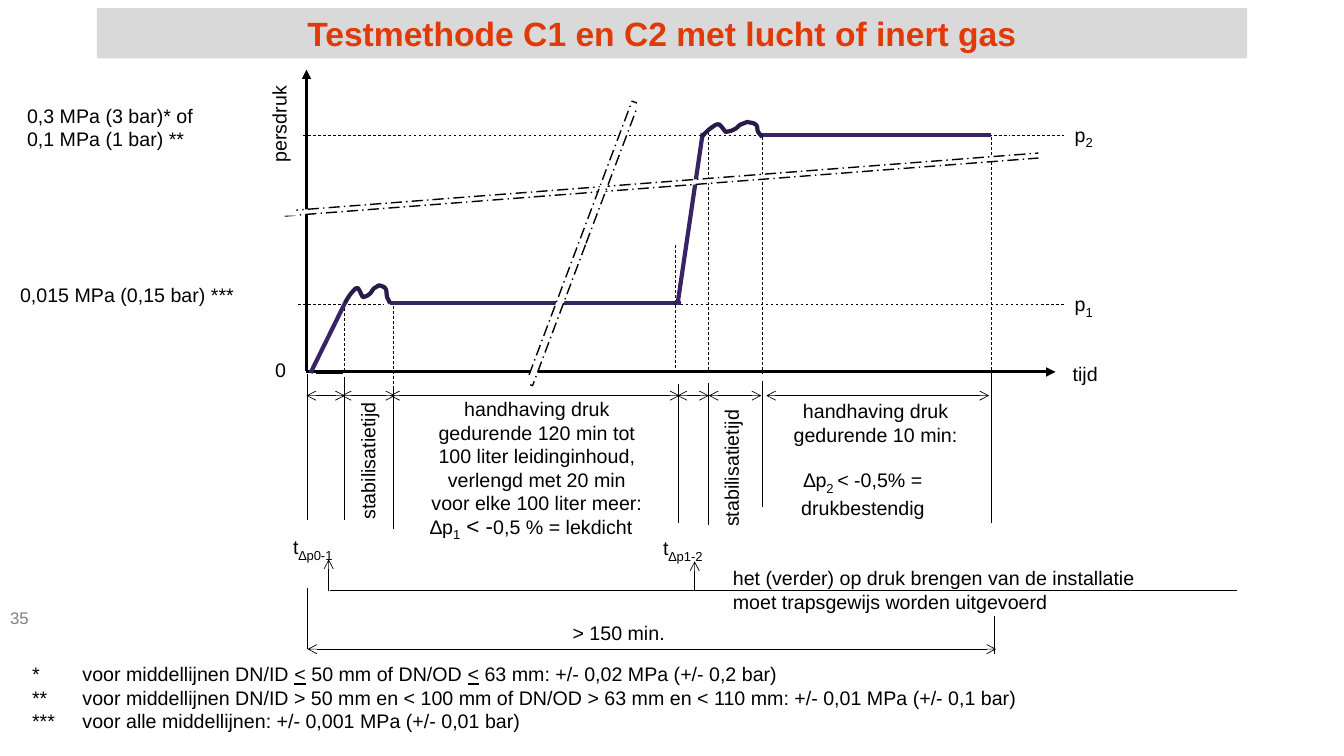
"""Draw the pressure test diagram for methods C1 and C2 on a grid of 0.1 inch."""
from dataclasses import dataclass
from typing import NamedTuple

import lxml.etree
import pptx
import pptx.dml.color
import pptx.enum.dml
import pptx.enum.shapes
import pptx.enum.text
import pptx.oxml.ns
import pptx.util

DASH = pptx.enum.dml.MSO_LINE.DASH
LONG_DASH_DOT = pptx.enum.dml.MSO_LINE.LONG_DASH_DOT
LEFT = pptx.enum.text.PP_ALIGN.LEFT
CENTER = pptx.enum.text.PP_ALIGN.CENTER
TOP = pptx.enum.text.MSO_ANCHOR.TOP
MIDDLE = pptx.enum.text.MSO_ANCHOR.MIDDLE
BLACK, WHITE, PRESSURE, WAVE = "000000", "FFFFFF", "372462", "291B49"

START, STABLE_1, HOLD_1, RISE, STABLE_2, HOLD_2, END = 30.5, 34.2, 39, 67.3, 70.3, 75.6, 98.3
LEVEL_1, LEVEL_2, TIME_AXIS, DIMENSIONS, TOTAL = 30.2, 13.4, 36.9, 39.25, 64.4
WAVE_POINTS = [
    (0, 18), (2, 14), (5, 9), (8, 6), (9, 5), (11, 2), (13, 3), (15, 5), (16, 9),
    (18, 12), (20, 11), (22, 11), (24, 9), (26, 8), (27, 5), (29, 3), (31, 2),
    (32, 1), (34, 0), (36, 1), (39, 1), (40, 3), (42, 5), (41, 9), (42, 12),
    (43, 14), (44, 16), (45, 18),
]


class Segment(NamedTuple):
    x1: float
    y1: float
    x2: float
    y2: float


@dataclass(frozen=True)
class Stroke:
    segments: list[Segment]
    width: float = 0.5
    color: str = BLACK
    dash: object = None
    head: str = ""
    tail: str = ""


class Bar(NamedTuple):
    left: float
    top: float
    width: float
    height: float
    rotation: float = 0
    outlined: bool = False


class Run(NamedTuple):
    text: str
    size: float = 14
    baseline: int = 0
    underline: bool = False


@dataclass(frozen=True)
class Label:
    left: float
    top: float
    width: float
    height: float
    lines: list[list[Run]]
    align: object = LEFT
    rotation: float = 0
    wrap: bool = False
    hanging: float = 0
    color: str = BLACK
    inset: float = 1
    anchor: object = TOP


STROKES = [
    Stroke([Segment(30.4, 36.8, 30.4, 6.9), Segment(30.4, TIME_AXIS, 104.7, TIME_AXIS)],
           width=2.25, tail="triangle"),
    Stroke([Segment(29.6, LEVEL_1, 38.1, LEVEL_1), Segment(67, LEVEL_1, 105.5, LEVEL_1),
            Segment(30.1, LEVEL_2, 100.1, LEVEL_2), Segment(100.4, LEVEL_2, 105.5, LEVEL_2),
            Segment(STABLE_1, 30.1, STABLE_1, 36.8), Segment(HOLD_1, 29.9, HOLD_1, 38.3),
            Segment(67, 24.3, 67, 36.7), Segment(STABLE_2, 13.1, STABLE_2, 36.7),
            Segment(HOLD_2, 13.6, HOLD_2, 37.1), Segment(END, 13.6, END, 37.2)], dash=DASH),
    Stroke([Segment(START, 37.1, START, 51.6), Segment(STABLE_1, 37.4, STABLE_1, 51.6),
            Segment(HOLD_1, 38.3, HOLD_1, 52.5), Segment(RISE, 38.1, RISE, 51.9),
            Segment(STABLE_2, 38, STABLE_2, 52.1), Segment(HOLD_2, 37.8, HOLD_2, 50.3),
            Segment(END, 37.1, END, 51.9), Segment(START, 58.3, START, TOTAL),
            Segment(98.6, 61.1, 98.6, 64.9), Segment(32.7, 58.6, 122.7, 58.6),
            Segment(31.3, 37, 34, 37)]),
    Stroke([Segment(32.6, 58.6, 32.6, 55.5), Segment(68.9, 58.6, 68.9, 55.7)], tail="arrow"),
    Stroke([Segment(30.4, DIMENSIONS, STABLE_1, DIMENSIONS),
            Segment(33.9, DIMENSIONS, 39.2, DIMENSIONS),
            Segment(38.7, DIMENSIONS, 67.4, DIMENSIONS),
            Segment(67.2, DIMENSIONS, STABLE_2, DIMENSIONS),
            Segment(STABLE_2, DIMENSIONS, 75.5, DIMENSIONS),
            Segment(76, DIMENSIONS, 98.1, DIMENSIONS),
            Segment(START, TOTAL, 98.8, TOTAL)], head="arrow", tail="arrow"),
    Stroke([Segment(30.8, 37, STABLE_1, 30.1), Segment(38.7, 30.1, 67.5, 30.1),
            Segment(67.2, LEVEL_1, 69.7, 13.2), Segment(75.6, LEVEL_2, END, LEVEL_2)],
           width=3, color=PRESSURE),
]
BARS = [
    Bar(28, 18, 76.8, 0.5, 355.6, True), Bar(103, 15, 3.3, 2.9), Bar(26.1, 18.5, 3.3, 2.9),
    Bar(42.8, 23.8, 29.9, 0.7, 290.6, True), Bar(63.2, 8.5, 3.8, 2.4), Bar(49.6, 37.4, 3, 1.1),
]
LABELS = [
    Label(1.7, 9.8, 19, 8.1, [[Run("0,3 MPa (3 bar)* of")], [Run("0,1 MPa (1 bar) **")]]),
    Label(1, 27.6, 23.9, 3.4, [[Run("0,015 MPa (0,15 bar) ***")]]),
    Label(22.6, 10.3, 10.2, 3.4, [[Run("persdruk")]], rotation=270),
    Label(26.3, 35, 3.1, 3.4, [[Run("0")]]),
    Label(105.4, 35.4, 5.1, 3.4, [[Run("tijd")]]),
    Label(105.6, 28.2, 3.9, 3.4, [[Run("p"), Run("1", 16, -25)]]),
    Label(105.6, 11.4, 3.9, 3.4, [[Run("p"), Run("2", 16, -25)]]),
    Label(28.1, 52.3, 6.4, 3.4, [[Run("t"), Run("∆p0-1", 16, -25)]]),
    Label(64.8, 52.4, 6.4, 3.4, [[Run("t"), Run("∆p1-2", 16, -25)]]),
    Label(55.8, 61.1, 11.2, 3.4, [[Run("> 150 min.")]]),
    Label(41.2, 38.9, 24.1, 12.8,
          [[Run("handhaving druk")], [Run("gedurende 120 min tot")],
           [Run("100 liter leidinginhoud,")], [Run("verlengd met 20 min")],
           [Run("voor elke 100 liter meer:")]], CENTER),
    Label(38.4, 50.3, 28.6, 3.7,
          [[Run("∆p"), Run("1", 16, -25), Run(" < -", 16), Run("0,5 % = lekdicht")]],
          CENTER, wrap=True),
    Label(77.7, 39.1, 18.3, 8.1, [[Run("handhaving druk")], [Run("gedurende 10 min:")]], CENTER),
    Label(72.3, 45.7, 26.6, 5.7,
          [[Run("∆p"), Run("2 ", 16, -25), Run("< -0,5% =")], [Run("drukbestendig")]],
          CENTER, wrap=True),
    Label(29.7, 44, 13.6, 3.4, [[Run("stabilisatietijd")]], rotation=270, wrap=True),
    Label(65.5, 44.5, 14.1, 3.4, [[Run("stabilisatietijd")]], rotation=270, wrap=True),
    Label(71.7, 55.7, 44.2, 5.7,
          [[Run("het (verder) op druk brengen van de installatie")],
           [Run("moet trapsgewijs worden uitgevoerd")]], wrap=True),
    Label(2.2, 65.2, 130.7, 8.1,
          [[Run("*\tvoor middellijnen DN/ID "), Run("<", underline=True),
            Run(" 50 mm of DN/OD "), Run("<", underline=True),
            Run(" 63 mm: +/- 0,02 MPa (+/- 0,2 bar)")],
           [Run("**\tvoor middellijnen DN/ID > 50 mm en < 100 mm of DN/OD > 63 mm en < 110 mm: "
                "+/- 0,01 MPa (+/- 0,1 bar)")],
           [Run("***\tvoor alle middellijnen: +/- 0,001 MPa (+/- 0,01 bar)")]],
          wrap=True, hanging=5),
    Label(1, 59.3, 7.1, 4, [[Run("35", 12)]], wrap=True, color="808080", inset=0, anchor=MIDDLE),
]


def grid(cells: float) -> pptx.util.Length:
    return pptx.util.Inches(cells / 10)


def rgb(color: str) -> pptx.dml.color.RGBColor:
    return pptx.dml.color.RGBColor.from_string(color)


def add_run(paragraph, text: str, *, size: float = 14, color: str = BLACK,
            bold: bool = False, underline: bool = False, baseline: int = 0) -> None:
    run = paragraph.add_run()
    run.text = text
    run.font.name = "Arial"
    run.font.size = pptx.util.Pt(size)
    run.font.bold = bold
    run.font.underline = underline
    run.font.color.rgb = rgb(color)
    if baseline:
        run.font._element.set("baseline", str(baseline * 1000))


def draw_stroke(slide, stroke: Stroke) -> None:
    for segment in stroke.segments:
        connector = slide.shapes.add_connector(
            pptx.enum.shapes.MSO_CONNECTOR.STRAIGHT, *map(grid, segment))
        connector.line.width = pptx.util.Pt(stroke.width)
        connector.line.color.rgb = rgb(stroke.color)
        if stroke.dash:
            connector.line.dash_style = stroke.dash
        line = connector.line._get_or_add_ln()
        for end, kind in (("a:headEnd", stroke.head), ("a:tailEnd", stroke.tail)):
            if kind:
                lxml.etree.SubElement(line, pptx.oxml.ns.qn(end), type=kind)
        lxml.etree.SubElement(connector._element.spPr, pptx.oxml.ns.qn("a:effectLst"))


def draw_wave(slide, left: float, top: float, width: float, height: float) -> None:
    points = [(grid(left + x / 45 * width), grid(top + y / 18 * height)) for x, y in WAVE_POINTS]
    curve = []
    for first in range(0, len(points) - 1, 3):
        for step in range(1, 7):
            t = step / 6
            weights = ((1 - t) ** 3, 3 * t * (1 - t) ** 2, 3 * t * t * (1 - t), t ** 3)
            corners = points[first:first + 4]
            curve.append(tuple(sum(w * corner[axis] for w, corner in zip(weights, corners))
                               for axis in (0, 1)))
    builder = slide.shapes.build_freeform(*points[0])
    builder.add_line_segments(curve, close=False)
    shape = builder.convert_to_shape()
    shape.shadow.inherit = False
    shape.fill.background()
    shape.line.width = pptx.util.Pt(3)
    shape.line.color.rgb = rgb(WAVE)


def draw_bar(slide, bar: Bar, color: str = WHITE):
    shape = slide.shapes.add_shape(
        pptx.enum.shapes.MSO_SHAPE.RECTANGLE, *map(grid, bar[:4]))
    shape.rotation = bar.rotation
    shape.shadow.inherit = False
    shape.fill.solid()
    shape.fill.fore_color.rgb = rgb(color)
    if bar.outlined:
        shape.line.color.rgb = rgb(BLACK)
        shape.line.width = pptx.util.Pt(1)
        shape.line.dash_style = LONG_DASH_DOT
    else:
        shape.line.fill.background()
    return shape


def draw_label(slide, label: Label) -> None:
    shape = slide.shapes.add_textbox(
        *map(grid, (label.left, label.top, label.width, label.height)))
    shape.rotation = label.rotation
    frame = shape.text_frame
    frame.word_wrap = label.wrap
    frame.vertical_anchor = label.anchor
    frame.margin_left = frame.margin_right = grid(label.inset)
    frame.margin_top = frame.margin_bottom = grid(label.inset / 2)
    if label.anchor == TOP:
        frame.auto_size = pptx.enum.text.MSO_AUTO_SIZE.SHAPE_TO_FIT_TEXT
    for index, line in enumerate(label.lines):
        paragraph = frame.add_paragraph() if index else frame.paragraphs[0]
        paragraph.alignment = label.align
        if label.hanging:
            properties = paragraph._p.get_or_add_pPr()
            properties.set("marL", str(grid(label.hanging)))
            properties.set("indent", str(-grid(label.hanging)))
        for run in line:
            add_run(paragraph, run.text, size=run.size, color=label.color,
                    underline=run.underline, baseline=run.baseline)


def draw_title(slide) -> None:
    frame = draw_bar(slide, Bar(9.6, 0.8, 114.1, 5), "D9D9D9").text_frame
    frame.margin_right = grid(3)
    frame.paragraphs[0].alignment = CENTER
    add_run(frame.paragraphs[0], "Testmethode C1 en C2 met lucht of inert gas",
            size=24, color="DF3A07", bold=True)


def main() -> None:
    presentation = pptx.Presentation()
    presentation.slide_width, presentation.slide_height = grid(133.3), grid(75)
    slide = presentation.slides.add_slide(presentation.slide_layouts[6])
    for stroke in STROKES:
        draw_stroke(slide, stroke)
    draw_wave(slide, STABLE_1, 28.3, 4.5, 1.8)
    draw_wave(slide, 69.6, 12.1, 6, 1.5)
    for bar in BARS:
        draw_bar(slide, bar)
    for label in LABELS:
        draw_label(slide, label)
    draw_title(slide)
    presentation.save("out.pptx")


if __name__ == "__main__":
    main()
